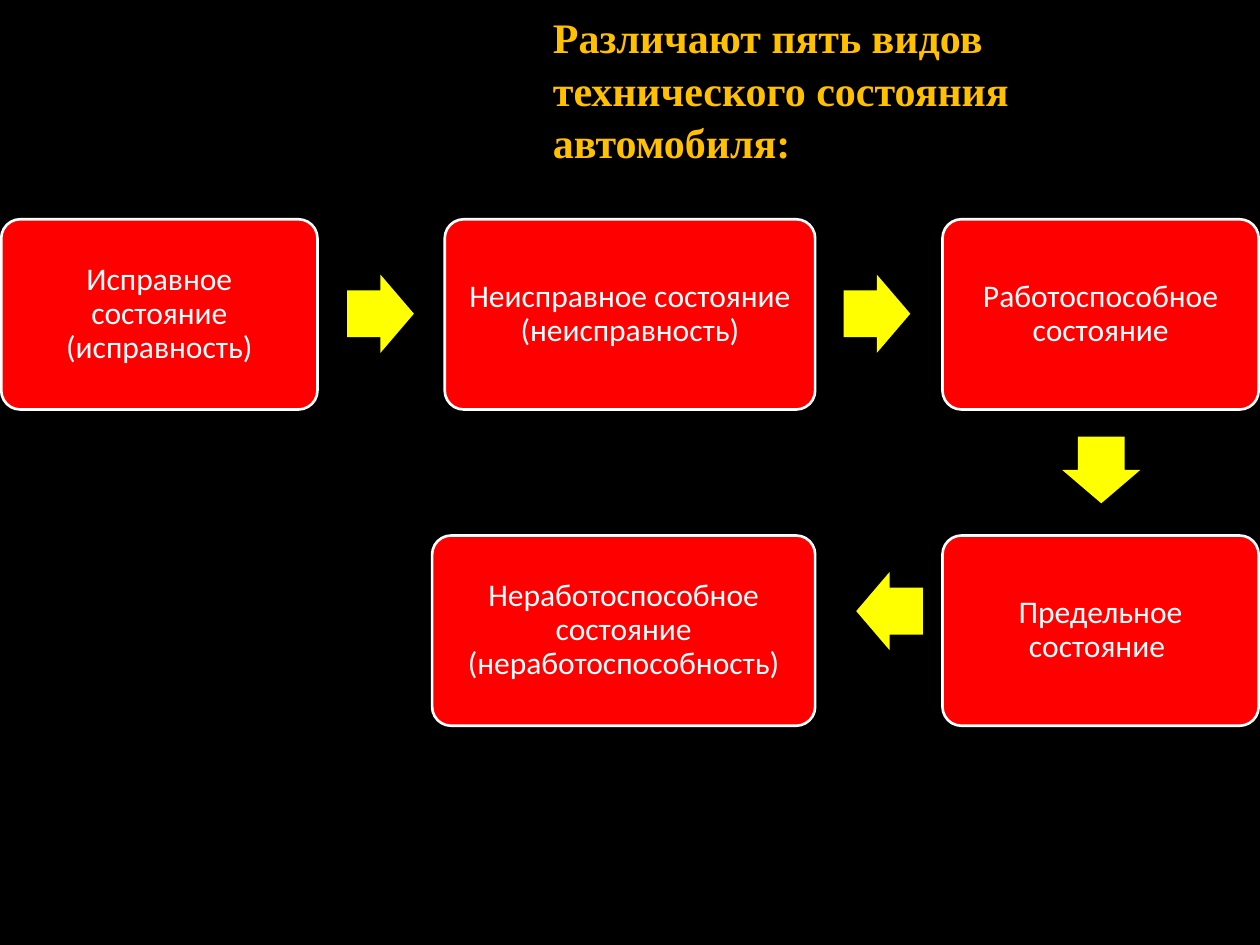
from pptx import Presentation
from pptx.dml.color import RGBColor
from pptx.enum import shapes, text
from pptx.util import Inches, Pt

TITLE = "Различают пять видов технического состояния автомобиля:"
TOP_ROW, BOTTOM_ROW = 1.74, 4.25
BOX_HEIGHT = 1.51
ARROW_WIDTH, ARROW_HEIGHT = 0.53, 0.62

STATES = [
    ("Исправное состояние (исправность)", 0.01, TOP_ROW, 2.51),
    ("Неисправное состояние (неисправность)", 3.53, TOP_ROW, 2.94),
    ("Работоспособное состояние", 7.48, TOP_ROW, 2.51),
    ("Предельное состояние ", 7.48, BOTTOM_ROW, 2.51),
    ("Неработоспособное состояние (неработоспособность)", 3.43, BOTTOM_ROW, 3.04),
]
ARROW_CENTRES = [
    (3.02, 2.49, 0),
    (6.96, 2.49, 0),
    (8.74, 3.73, 90),
    (7.06, 4.85, 180),
]


def color(value):
    return RGBColor.from_string(value)


def add_span(para, words, font, size, shade, bold=False):
    span = para.add_run()
    span.text = words
    span.font.name = font
    span.font.size = Pt(size)
    span.font.bold = bold
    span.font.color.rgb = color(shade)


def add_filled(page, kind, left, top, width, height, fill, adjustments):
    shape = page.shapes.add_shape(
        kind, Inches(left), Inches(top), Inches(width), Inches(height))
    shape.shadow.inherit = False
    shape.fill.solid()
    shape.fill.fore_color.rgb = color(fill)
    for index, value in enumerate(adjustments):
        shape.adjustments[index] = value
    return shape


def add_title(page):
    box = page.shapes.add_textbox(Inches(4.29), Inches(0.02), Inches(5), Inches(1.31))
    box.text_frame.word_wrap = True
    para = box.text_frame.paragraphs[0]
    para.line_spacing = 1.05
    add_span(para, TITLE, "Times New Roman", 24, "FFC000", bold=True)


def add_state(page, words, left, top, width):
    box = add_filled(page, shapes.MSO_SHAPE.ROUNDED_RECTANGLE,
                     left, top, width, BOX_HEIGHT, "FF0000", [0.1])
    box.line.color.rgb = color("FFFFFF")
    box.line.width = Pt(1.5)
    frame = box.text_frame
    frame.word_wrap = True
    frame.vertical_anchor = text.MSO_ANCHOR.MIDDLE
    frame.margin_left = frame.margin_right = Inches(0.07)
    frame.margin_top = frame.margin_bottom = Inches(0.07)
    para = frame.paragraphs[0]
    para.alignment = text.PP_ALIGN.CENTER
    para.line_spacing = 0.9
    add_span(para, words, "Calibri", 18, "FFFFFF")


def add_arrow(page, centre_x, centre_y, rotation):
    arrow = add_filled(page, shapes.MSO_SHAPE.RIGHT_ARROW,
                       centre_x - ARROW_WIDTH / 2, centre_y - ARROW_HEIGHT / 2,
                       ARROW_WIDTH, ARROW_HEIGHT, "FFFF00", [0.6, 0.5])
    arrow.line.fill.background()
    arrow.rotation = rotation


def main():
    deck = Presentation()
    deck.slide_width, deck.slide_height = Inches(10), Inches(7.5)
    page = deck.slides.add_slide(deck.slide_layouts[6])
    page.background.fill.solid()
    page.background.fill.fore_color.rgb = color("000000")
    add_title(page)
    for state in STATES:
        add_state(page, *state)
    for arrow in ARROW_CENTRES:
        add_arrow(page, *arrow)
    deck.save("out.pptx")


if __name__ == "__main__":
    main()
